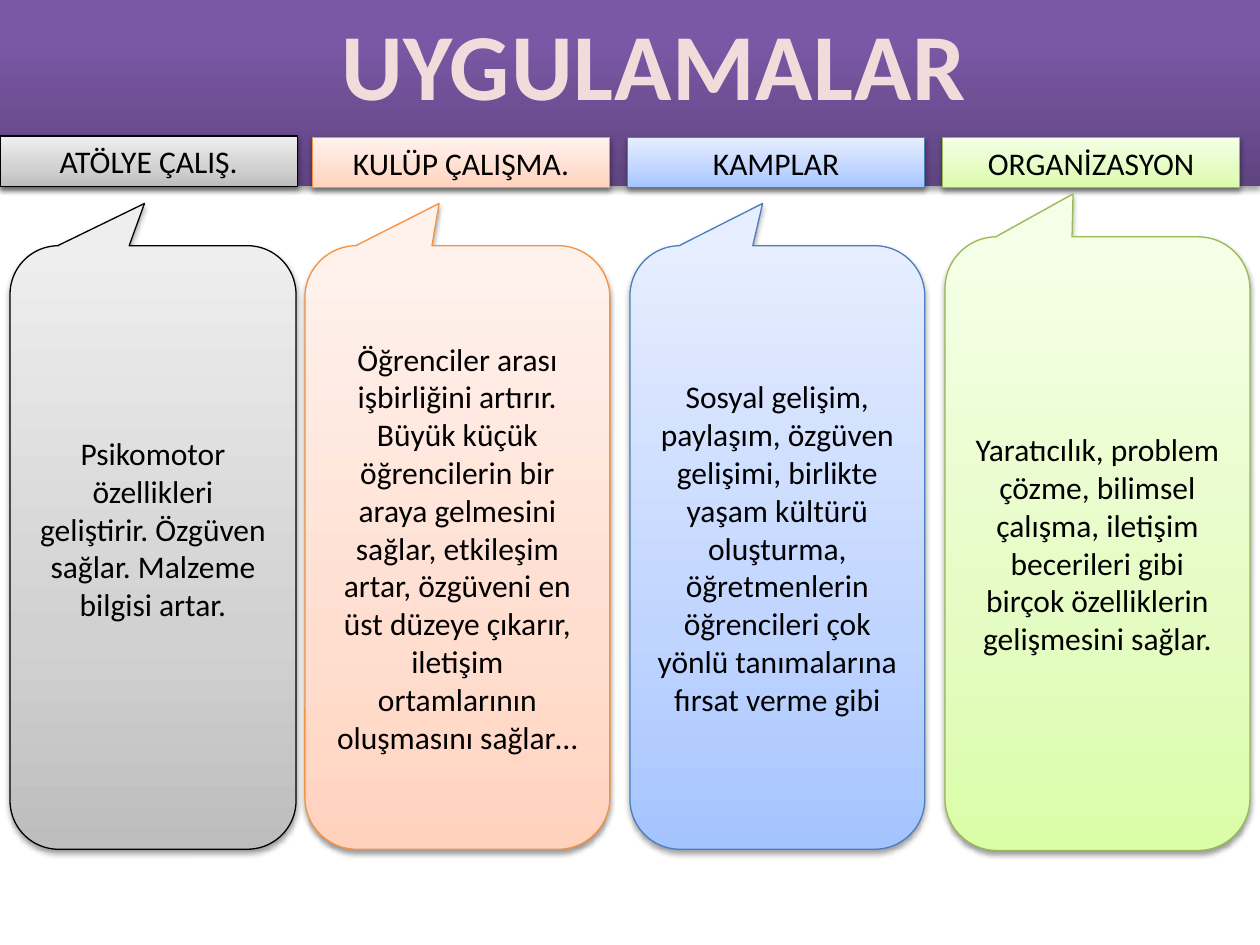
from dataclasses import dataclass
from lxml.etree import SubElement
from pptx import Presentation
from pptx.dml.color import RGBColor
from pptx.enum.shapes import MSO_SHAPE as Preset
from pptx.enum.text import MSO_ANCHOR as Anchor, MSO_AUTO_SIZE as AutoSize, PP_ALIGN as Align
from pptx.oxml.ns import qn
from pptx.util import Inches, Pt


@dataclass(frozen=True)
class Tint:
    stops: tuple
    line: str = ""


@dataclass(frozen=True)
class Theme:
    font: str = "Calibri"
    title_size: int = 54
    text_size: int = 18
    line_width: float = 0.75
    title: str = "F2DCDB"
    text: str = "000000"
    shadow: str = "000000"
    band: Tint = Tint(((0, "5F4480"), (80, "7B58A6"), (100, "7C57A8")))
    gray: Tint = Tint(((0, "BDBDBD"), (35, "D1D1D1"), (100, "EEEEEE")), "000000")
    orange: Tint = Tint(((0, "FFD2BD"), (35, "FFDED0"), (100, "FFF2ED")), "F69240")
    blue: Tint = Tint(((0, "A4C4FF"), (35, "BFD4FF"), (100, "E6EEFF")), "4B7EBC")
    green: Tint = Tint(((0, "DAFDA7"), (35, "E4FCC2"), (100, "F5FFE7")), "98B955")


class Board:
    columns, rows = 100, 75

    def __init__(self, deck, theme):
        self.theme = theme
        self.cell_width = deck.slide_width / self.columns
        self.cell_height = deck.slide_height / self.rows
        self.page = deck.slides.add_slide(deck.slide_layouts[5])

    def place(self, left, top, width, height):
        return (round(left * self.cell_width), round(top * self.cell_height),
                round(width * self.cell_width), round(height * self.cell_height))

    def style_paragraph(self, para, size, color, bold=False):
        para.alignment = Align.CENTER
        para.font.name = self.theme.font
        para.font.size = Pt(size)
        para.font.bold = bold
        para.font.color.rgb = RGBColor.from_string(color)

    def add_shadow(self, shape, distance, opacity):
        shape.shadow.inherit = False
        effects = shape.element.spPr.find(qn("a:effectLst"))
        shadow = SubElement(effects, qn("a:outerShdw"), blurRad=str(Pt(3.1)),
                            dist=str(Pt(distance)), dir="5400000", rotWithShape="0")
        color = SubElement(shadow, qn("a:srgbClr"), val=self.theme.shadow)
        SubElement(color, qn("a:alpha"), val=str(opacity * 1000))

    def add_panel(self, preset, area, tint, distance=1.6, opacity=38):
        shape = self.page.shapes.add_shape(preset, *self.place(*area))
        shape.fill.gradient()
        shape.fill.gradient_angle = 90
        stops = shape.element.spPr.find(qn("a:gradFill")).find(qn("a:gsLst"))
        for stop in list(stops):
            stops.remove(stop)
        for position, color in tint.stops:
            stop = SubElement(stops, qn("a:gs"), pos=str(position * 1000))
            SubElement(stop, qn("a:srgbClr"), val=color)
        if tint.line:
            shape.line.color.rgb = RGBColor.from_string(tint.line)
            shape.line.width = Pt(self.theme.line_width)
        else:
            shape.line.fill.background()
        self.add_shadow(shape, distance, opacity)
        return shape

    def set_text(self, shape, text, anchor):
        frame = shape.text_frame
        frame.word_wrap = True
        frame.vertical_anchor = anchor
        para = frame.paragraphs[0]
        para.text = text
        self.style_paragraph(para, self.theme.text_size, self.theme.text)
        return frame

    def add_band(self, area):
        self.add_panel(Preset.RECTANGLE, area, self.theme.band, 1.8, 35)

    def add_title(self, text, area):
        box = self.page.shapes.title
        box.left, box.top, box.width, box.height = self.place(*area)
        frame = box.text_frame
        frame.word_wrap = False
        frame.auto_size = AutoSize.NONE
        frame.vertical_anchor = Anchor.TOP
        para = frame.paragraphs[0]
        span = para.add_run()
        span.text = text
        span.font._element.set("spc", "50")
        self.style_paragraph(para, self.theme.title_size, self.theme.title, True)
        box.element.getparent().append(box.element)

    def add_heading(self, text, area, tint):
        self.set_text(self.add_panel(Preset.RECTANGLE, area, tint), text, Anchor.TOP)

    def add_callout(self, text, area, tip, tint, lift):
        shape = self.add_panel(Preset.ROUNDED_RECTANGULAR_CALLOUT, area, tint)
        for index, value in enumerate((*tip, 0.17)):
            shape.adjustments[index] = value
        frame = self.set_text(shape, text, Anchor.MIDDLE)
        frame.margin_bottom += round(lift * self.cell_height)


def main():
    deck = Presentation()
    deck.slide_width, deck.slide_height = Inches(10), Inches(7.5)
    theme = Theme()
    board = Board(deck, theme)
    board.add_band((0, 0, 100, 14.8))
    topics = (
        ("ATÖLYE ÇALIŞ.", theme.gray, 10.8, (0.8, 19.5, 22.7, 47.9), (-0.03, -0.57), 3,
         "Psikomotor özellikleri geliştirir. Özgüven sağlar. Malzeme bilgisi artar."),
        ("KULÜP ÇALIŞMA.", theme.orange, 10.9, (24.2, 19.5, 24.2, 47.9), (-0.06, -0.57), 0,
         "Öğrenciler arası işbirliğini artırır. Büyük küçük öğrencilerin bir araya gelmesini "
         "sağlar, etkileşim artar, özgüveni en üst düzeye çıkarır, iletişim ortamlarının "
         "oluşmasını sağlar…"),
        ("KAMPLAR", theme.blue, 10.9, (50, 19.5, 23.4, 47.9), (-0.05, -0.57), 0,
         "Sosyal gelişim, paylaşım, özgüven gelişimi, birlikte yaşam kültürü oluşturma, "
         "öğretmenlerin öğrencileri çok yönlü tanımalarına fırsat verme gibi"),
        ("ORGANİZASYON", theme.green, 10.9, (75, 18.8, 24.2, 48.7), (-0.08, -0.57), 0,
         "Yaratıcılık, problem çözme, bilimsel çalışma, iletişim becerileri gibi birçok "
         "özelliklerin gelişmesini sağlar."),
    )
    for index, (heading, tint, top, area, tip, lift, text) in enumerate(topics):
        board.add_heading(heading, (max(0, 25 * index - 0.2), top, 23.6, 4), tint)
        board.add_callout(text, area, tip, tint, lift)
    board.add_title("UYGULAMALAR", (25.8, 0, 52.2, 10.1))
    deck.save("out.pptx")


if __name__ == "__main__":
    main()
